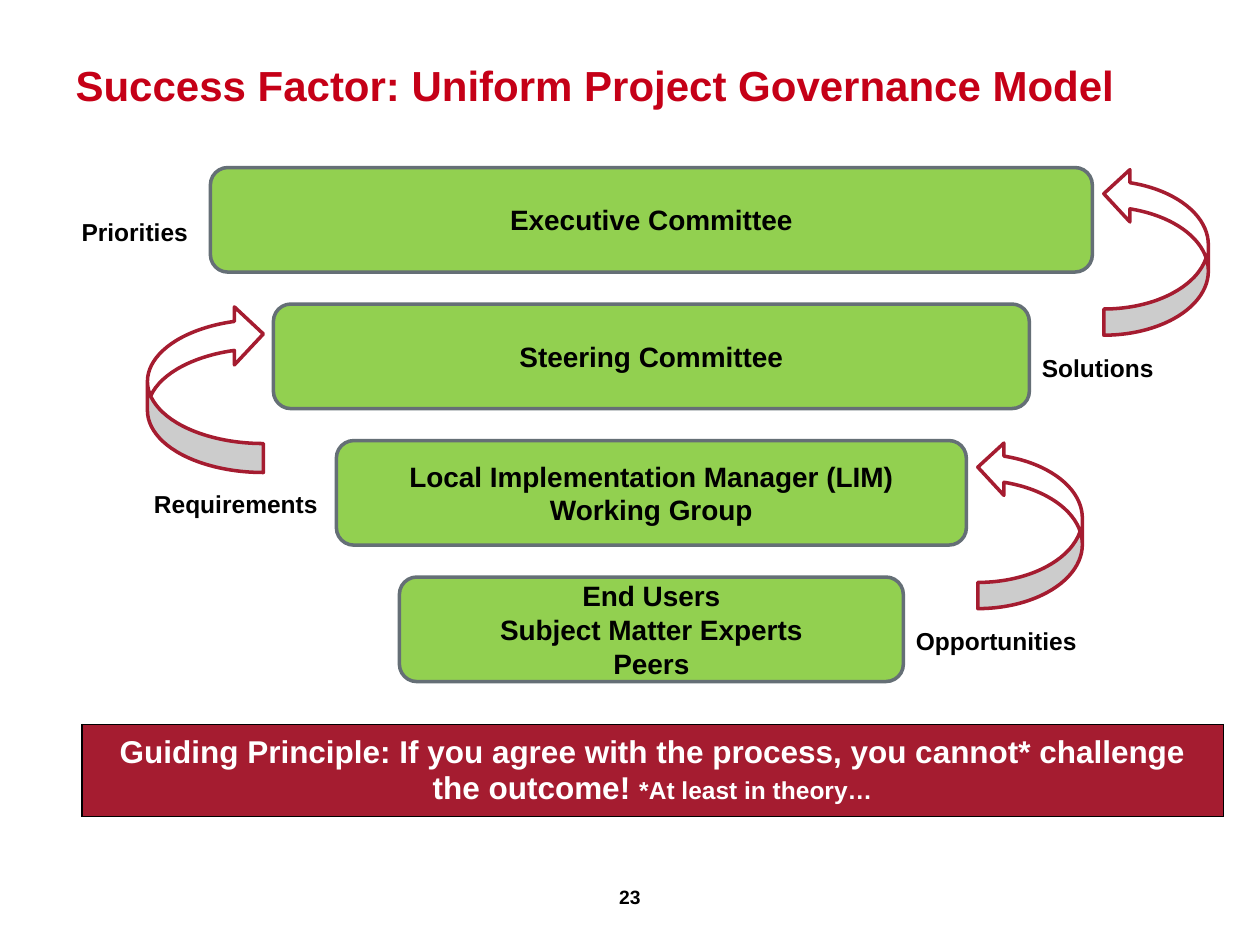
"""Build the project governance slide: four tiers, arrows, labels and a principle."""
from typing import NamedTuple

from lxml import etree
from pptx import Presentation, util as u
from pptx.dml.color import RGBColor
from pptx.enum import shapes, text
from pptx.oxml import ns

LEFT, MID, RIGHT = text.PP_ALIGN.LEFT, text.PP_ALIGN.CENTER, text.PP_ALIGN.RIGHT
KIND = shapes.MSO_SHAPE
RED = "A51C30"


class Box(NamedTuple):
    left: float
    top: float
    width: float
    height: float

    def emu(self) -> list:
        return [u.Inches(v) for v in self]


class Label(NamedTuple):
    words: str
    box: Box
    align: int


class Arrow(NamedTuple):
    kind: int
    box: Box


def tint(code: str) -> RGBColor:
    return RGBColor.from_string(code)


def write(frame, words: str, size=14, color="000000", align=LEFT, more=False) -> None:
    frame.word_wrap = True
    for i, line in enumerate(words.split("\n")):
        fresh = i > 0 and not more
        para = frame.add_paragraph() if fresh else frame.paragraphs[-1]
        para.alignment = align
        run = para.add_run()
        run.text = line
        font = run.font
        font.name, font.size, font.bold = "Arial", u.Pt(size), True
        font.color.rgb = tint(color)


def shape(slide, kind: int, box: Box, fill: str, line: str):
    item = slide.shapes.add_shape(kind, *box.emu())
    item.shadow.inherit = False
    item.fill.solid()
    item.fill.fore_color.rgb = tint(fill)
    item.line.color.rgb = tint(line)
    item.line.width = u.Pt(2)
    return item


def tier(slide, rank: int, words: str) -> None:
    box = Box(1.67 + rank / 2, 1.33 + rank * 13 / 12, 7 - rank, 0.83)
    item = shape(slide, KIND.ROUNDED_RECTANGLE, box, "92D050", "656F76")
    frame = item.text_frame
    frame.vertical_anchor = text.MSO_ANCHOR.MIDDLE
    frame.margin_top = frame.margin_bottom = 0
    write(frame, words, size=16, align=MID)


def label(slide, item: Label, size=14) -> None:
    frame = slide.shapes.add_textbox(*item.box.emu()).text_frame
    write(frame, item.words, size=size, align=item.align)


def arrow(slide, item: Arrow) -> None:
    shape(slide, item.kind, item.box, "FFFFFF", RED).rotation = 180


def edge(cell) -> None:
    props = cell._tc.get_or_add_tcPr()
    for i, side in enumerate("LRTB"):
        line = etree.Element(ns.qn(f"a:ln{side}"), w=str(u.Pt(1)))
        fill = etree.SubElement(line, ns.qn("a:solidFill"))
        etree.SubElement(fill, ns.qn("a:srgbClr"), val="000000")
        props.insert(i, line)


def banner(slide, box: Box) -> None:
    cell = slide.shapes.add_table(1, 1, *box.emu()).table.cell(0, 0)
    cell.fill.solid()
    cell.fill.fore_color.rgb = tint(RED)
    cell.vertical_anchor = text.MSO_ANCHOR.MIDDLE
    edge(cell)
    lead = "Guiding Principle: If you agree with the process, you cannot* challenge the outcome! "
    write(cell.text_frame, lead, size=18, color="FFFFFF", align=MID)
    write(cell.text_frame, "*At least in theory…", color="FFFFFF", align=MID, more=True)


TIERS = [
    "Executive Committee",
    "Steering Committee",
    "Local Implementation Manager (LIM)\nWorking Group",
    "End Users\nSubject Matter Experts\nPeers",
]
ARROWS = [
    Arrow(KIND.CURVED_RIGHT_ARROW, Box(8.76, 1.33, 0.83, 1.33)),
    Arrow(KIND.CURVED_RIGHT_ARROW, Box(7.76, 3.5, 0.83, 1.33)),
    Arrow(KIND.CURVED_LEFT_ARROW, Box(1.17, 2.42, 0.92, 1.33)),
]
LABELS = [
    Label("Priorities", Box(0.17, 1.67, 1.42, 0.34), RIGHT),
    Label("Solutions", Box(8.17, 2.75, 1.8, 0.34), LEFT),
    Label("Requirements", Box(0.17, 3.83, 2.45, 0.34), RIGHT),
    Label("Opportunities", Box(7.17, 4.92, 2.8, 0.34), LEFT),
]


def main() -> None:
    deck = Presentation()
    deck.slide_width, deck.slide_height = u.Inches(10), u.Inches(7.5)
    slide = deck.slides.add_slide(deck.slide_layouts[5])
    title = slide.shapes.title
    title.left, title.top, title.width, title.height = Box(0.5, 0.17, 9.08, 1).emu()
    title.text_frame.vertical_anchor = text.MSO_ANCHOR.MIDDLE
    write(title.text_frame, "Success Factor: Uniform Project Governance Model",
          size=24, color="C50017")
    banner(slide, Box(0.65, 5.75, 9.06, 0.73))
    for rank, words in enumerate(TIERS):
        tier(slide, rank, words)
    for item in ARROWS:
        arrow(slide, item)
    for item in LABELS:
        label(slide, item)
    label(slide, Label("23", Box(0, 6.98, 10, 0.28), MID), size=11)
    deck.save("out.pptx")


if __name__ == "__main__":
    main()
